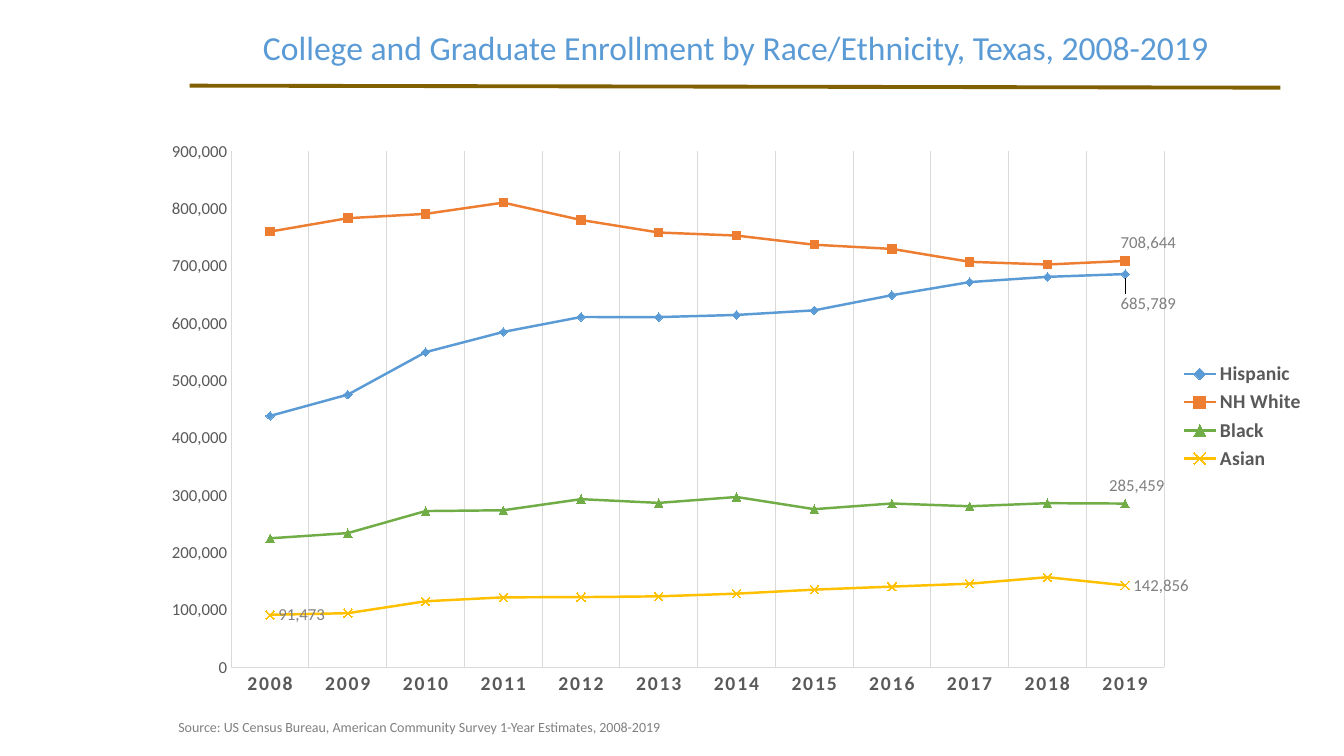
from lxml.etree import SubElement
from pptx import Presentation
from pptx.chart.data import CategoryChartData
from pptx.dml.color import RGBColor
from pptx.enum.chart import (XL_CHART_TYPE, XL_LABEL_POSITION, XL_LEGEND_POSITION,
                             XL_MARKER_STYLE, XL_TICK_MARK)
from pptx.enum.shapes import MSO_CONNECTOR
from pptx.enum.text import MSO_ANCHOR
from pptx.oxml.ns import qn
from pptx.util import Inches, Pt

SLIDE_WIDTH, SLIDE_HEIGHT = 13.33, 7.5
FONT = "Calibri"
BLUE, GRAY, DARK_GRAY, LIGHT_GRAY, BRONZE = "5B9BD5", "808080", "595959", "D9D9D9", "806000"
YEARS = [str(year) for year in range(2008, 2020)]
ENROLLMENT = [
    ("Hispanic", BLUE, XL_MARKER_STYLE.DIAMOND,
     [438441, 475529, 549531, 584856, 610867, 610722,
      614483, 622508, 648916, 671791, 680900, 685789]),
    ("NH White", "ED7D31", XL_MARKER_STYLE.SQUARE,
     [759798, 783197, 790783, 810331, 780112, 758223,
      752893, 736929, 729651, 707117, 702454, 708644]),
    ("Black", "70AD47", XL_MARKER_STYLE.TRIANGLE,
     [224917, 233939, 272391, 273737, 293158, 286624,
      296972, 275673, 285606, 280719, 286156, 285459]),
    ("Asian", "FFC000", XL_MARKER_STYLE.X,
     [91473, 94278, 115095, 121878, 122319, 123644,
      128321, 135340, 140679, 145699, 157033, 142856]),
]
POINT_LABELS = [
    ("Hispanic", 11, XL_LABEL_POSITION.BELOW, (0.02, 0.02)),
    ("NH White", 11, XL_LABEL_POSITION.ABOVE, (0.02, 0)),
    ("Black", 11, XL_LABEL_POSITION.ABOVE, (0.01, 0)),
    ("Asian", 0, XL_LABEL_POSITION.RIGHT, None),
    ("Asian", 11, XL_LABEL_POSITION.RIGHT, None),
]


def color(hex_value):
    return RGBColor.from_string(hex_value)


def across(percent):
    return Inches(SLIDE_WIDTH * percent / 100)


def down(percent):
    return Inches(SLIDE_HEIGHT * percent / 100)


def area(left, top, width, height):
    return across(left), down(top), across(width), down(height)


def style_font(font, size, hex_value, bold=False):
    font.name = FONT
    font.size = Pt(size)
    font.bold = bold
    font.color.rgb = color(hex_value)


def style_line(line, hex_value, width):
    line.color.rgb = color(hex_value)
    line.width = Pt(width)


def add_text(slide, text, place, size=10, hex_value=GRAY,
             anchor=MSO_ANCHOR.TOP, line_spacing=None):
    frame = slide.shapes.add_textbox(*area(*place)).text_frame
    frame.word_wrap = True
    frame.vertical_anchor = anchor
    paragraph = frame.paragraphs[0]
    paragraph.line_spacing = line_spacing
    run = paragraph.add_run()
    run.text = text
    style_font(run.font, size, hex_value)


def add_rule(slide, start, end):
    connector = slide.shapes.add_connector(
        MSO_CONNECTOR.STRAIGHT, across(start[0]), down(start[1]), across(end[0]), down(end[1]))
    style_line(connector.line, BRONZE, 2.75)
    SubElement(connector._element.spPr, qn("a:effectLst"))


def set_layout(parent, position, settings):
    for previous in parent.findall(qn("c:layout")):
        parent.remove(previous)
    layout = SubElement(parent, qn("c:layout"))
    manual = SubElement(layout, qn("c:manualLayout"))
    for tag, value in settings:
        SubElement(manual, qn(f"c:{tag}")).set("val", str(value))
    parent.insert(position, layout)


def style_axis(axis, size, bold=False):
    axis.major_tick_mark = axis.minor_tick_mark = XL_TICK_MARK.NONE
    style_font(axis.tick_labels.font, size, DARK_GRAY, bold)
    style_line(axis.format.line, LIGHT_GRAY, 0.75)


def style_series(series, hex_value, marker_style):
    series.smooth = False
    style_line(series.format.line, hex_value, 1.75)
    marker = series.marker
    marker.style = marker_style
    marker.size = 6
    style_line(marker.format.line, hex_value, 0.75)
    if marker_style == XL_MARKER_STYLE.X:
        marker.format.fill.background()
    else:
        marker.format.fill.solid()
        marker.format.fill.fore_color.rgb = color(hex_value)


def label_point(series, index, position, offset):
    label = series.points[index].data_label
    style_font(label.font, 12, GRAY)
    label.position = position
    if offset:
        element = series._element.xpath(f"c:dLbls/c:dLbl[c:idx/@val='{index}']")[0]
        set_layout(element, 1, zip("xy", offset))


def add_enrollment_chart(slide, place):
    data = CategoryChartData(number_format="#,##0")
    data.categories = YEARS
    for name, _, _, values in ENROLLMENT:
        data.add_series(name, values)
    chart = slide.shapes.add_chart(XL_CHART_TYPE.LINE_MARKERS, *area(*place), data).chart
    style_font(chart.font, 10, "000000")
    chart.has_title = False
    chart.has_legend = True
    chart.legend.position = XL_LEGEND_POSITION.RIGHT
    chart.legend.include_in_layout = False
    style_font(chart.legend.font, 14, DARK_GRAY, True)

    years = chart.category_axis
    style_axis(years, 14, True)
    years.tick_labels.font._element.set("spc", "120")
    years.has_major_gridlines = True
    style_line(years.major_gridlines.format.line, LIGHT_GRAY, 0.75)
    students = chart.value_axis
    style_axis(students, 12)
    students.has_major_gridlines = False
    students.minimum_scale, students.maximum_scale = 0, 900000
    students.major_unit = 100000
    students.tick_labels.number_format = "#,##0"
    students.tick_labels.number_format_is_linked = False

    plot = chart.plots[0]
    plot.vary_by_categories = False
    series_by_name = {series.name: series for series in plot.series}
    for name, hex_value, marker_style, _ in ENROLLMENT:
        style_series(series_by_name[name], hex_value, marker_style)
    for name, index, position, offset in POINT_LABELS:
        label_point(series_by_name[name], index, position, offset)
    plot_area = chart._chartSpace.chart.plotArea
    set_layout(plot_area, 0, [
        ("layoutTarget", "inner"), ("xMode", "edge"), ("yMode", "edge"),
        ("x", 0.063), ("y", 0.042), ("w", 0.806), ("h", 0.892)])


def main():
    presentation = Presentation()
    presentation.slide_width = Inches(SLIDE_WIDTH)
    presentation.slide_height = Inches(SLIDE_HEIGHT)
    slide = presentation.slides.add_slide(presentation.slide_layouts[6])
    add_rule(slide, (14.1, 11.33), (95.27, 11.6))
    add_enrollment_chart(slide, (11.78, 16.8, 86.12, 76.53))
    add_text(slide, "College and Graduate Enrollment by Race/Ethnicity, Texas, 2008-2019",
             (18.83, -2.53, 72.02, 18.13), size=24, hex_value=BLUE,
             anchor=MSO_ANCHOR.MIDDLE, line_spacing=0.9)
    add_text(slide, "Source: US Census Bureau, American Community Survey 1-Year Estimates, 2008-2019",
             (12.53, 94.4, 52.51, 3.6))
    presentation.save("out.pptx")


if __name__ == "__main__":
    main()
